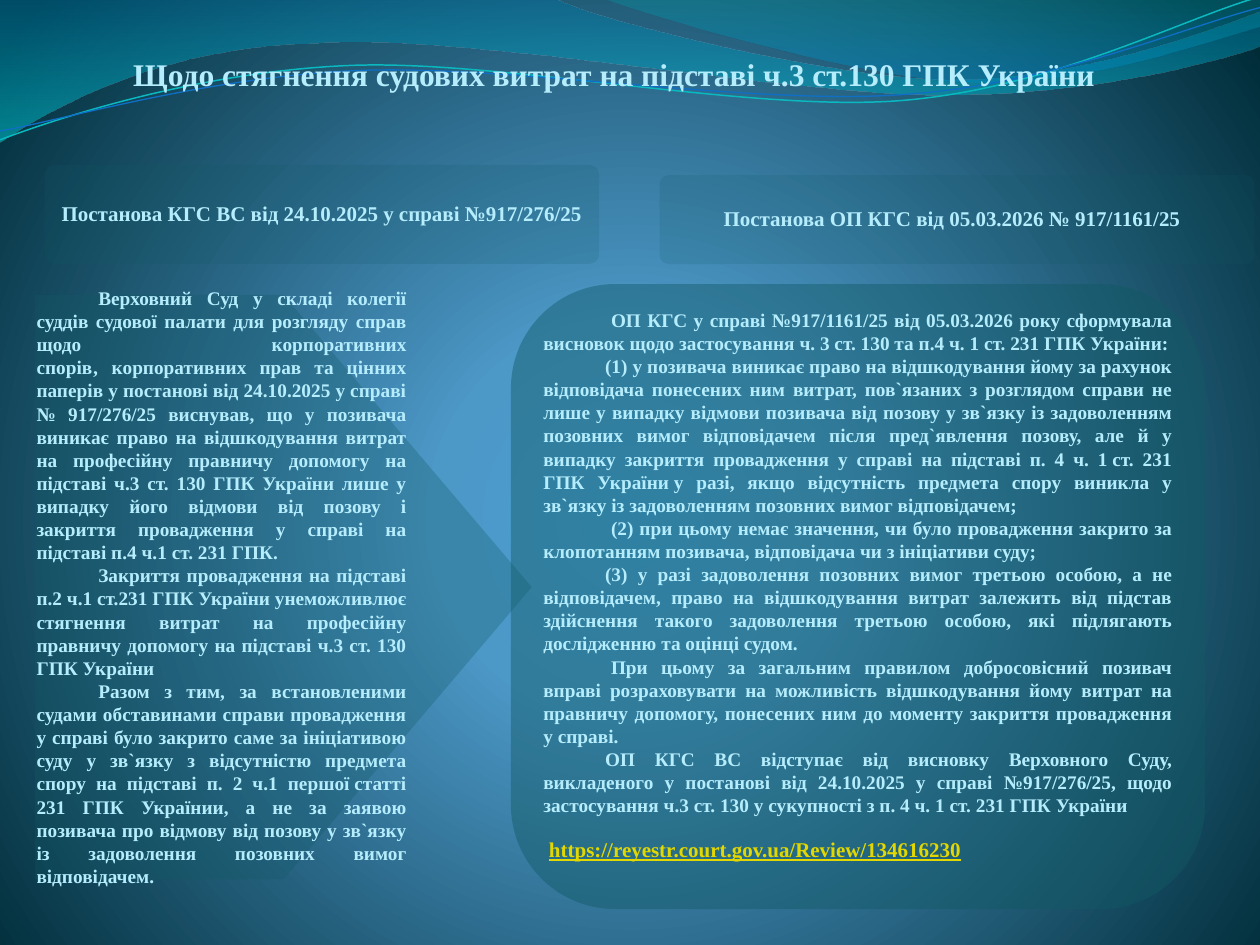
from math import cos, radians, sin

from lxml import etree
from pptx import Presentation
from pptx.dml.color import RGBColor
from pptx.enum.shapes import MSO_SHAPE
from pptx.enum.text import MSO_ANCHOR, PP_ALIGN
from pptx.oxml import parse_xml
from pptx.oxml.ns import nsdecls, qn
from pptx.util import Inches, Pt

CENTER, JUSTIFY = PP_ALIGN.CENTER, PP_ALIGN.JUSTIFY
TOP, MIDDLE = MSO_ANCHOR.TOP, MSO_ANCHOR.MIDDLE
PENTAGON = MSO_SHAPE.PENTAGON
SOFT_BOX = MSO_SHAPE.FLOWCHART_ALTERNATE_PROCESS
ROUNDED = MSO_SHAPE.ROUNDED_RECTANGLE

COLORS = {"text": "B5EDFD", "panel": "115964", "link": "E2D700",
          "glow": "4AA0D6", "sky": "4C98C7", "night": "002C38",
          "wave_blue": "0074A1", "wave_cyan": "00C6CF",
          "crest_teal": "00A1A9", "crest_blue": "008BBF",
          "line_cyan": "0AB8BF", "line_blue": "0F6FC6"}
FONT = "Times New Roman"
HARD_SPACE = chr(160)  # typed as ~ in the paragraphs below

prs = Presentation()
prs.slide_width, prs.slide_height = Inches(10), Inches(7.5)
slide = prs.slides.add_slide(prs.slide_layouts[6])
# Grid of 100 columns and 75 rows
COL, ROW = prs.slide_width / 100, prs.slide_height / 75


def gradient(stops, direction):
    """Gradient fill from (position %, colour, opacity %) stops."""
    marks = "".join(
        f'<a:gs pos="{pos * 1000}"><a:srgbClr val="{COLORS[color]}">'
        f'<a:alpha val="{opacity * 1000}"/></a:srgbClr></a:gs>'
        for pos, color, opacity in stops)
    return parse_xml(f'<a:gradFill {nsdecls("a")} rotWithShape="1">'
                     f'<a:gsLst>{marks}</a:gsLst>{direction}</a:gradFill>')


def write_text(area, anchor, inset, align, size, paragraphs, spacing=1.0):
    """Text box on the grid; paragraphs are (first-line indent, text)."""
    left, top, width, height = area
    box = slide.shapes.add_textbox(int(left * COL), int(top * ROW),
                                   int(width * COL), int(height * ROW))
    frame = box.text_frame
    frame.word_wrap = True
    frame.vertical_anchor = anchor
    frame.margin_left = frame.margin_right = int(inset * COL)
    frame.margin_top = frame.margin_bottom = int(inset * ROW)
    for number, (indent, text) in enumerate(paragraphs):
        para = frame.add_paragraph() if number else frame.paragraphs[0]
        para.text = text.replace("~", HARD_SPACE)
        para.alignment = align
        para.line_spacing = spacing
        para._p.get_or_add_pPr().set("marL", "0")
        para._p.get_or_add_pPr().set("indent", str(int(indent * COL)))
        para.font.name, para.font.size, para.font.bold = FONT, Pt(size), True
        para.font.color.rgb = RGBColor.from_string(COLORS["text"])
    return frame


# Background glow
slide.background.fill.gradient()
plain = slide.element.find(".//" + qn("p:bgPr")).find(qn("a:gradFill"))
plain.getparent().replace(plain, gradient(
    [(0, "glow", 100), (25, "sky", 100), (100, "night", 100)],
    '<a:path path="circle"><a:fillToRect l="10000" t="110000" r="10000" '
    'b="100000"/></a:path>'))

# Waves at the top: style, tilt, centre, then steps of one point (straight)
# or three points (curved)
waves = [
    ([(0, "wave_blue", 45), (100, "wave_cyan", 55)], 0, (50, 5.6),
     [[(0, 0)], [(44, -0.1)], [(47.6, 1.7), (66.4, 6.3), (75.8, 6.3)],
      [(85.3, 6.3), (95.8, 2.6), (100, 0.9)], [(100.1, 3.6)],
      [(98.3, 4.4), (87, 7.6), (74.6, 7.5)],
      [(62.2, 7.5), (38.2, 2.8), (25.7, 3.4)],
      [(12.9, 3.6), (4.6, 8.3), (-0.1, 11.3)]]),
    ([(0, "crest_teal", 30), (80, "crest_blue", 45)], 0, (74, 3.4),
     [[(47.9, -0.1)], [(50.9, 1.1), (68.2, 6.2), (76.9, 6.5)],
      [(85.6, 6.9), (96.1, 3.2), (100, 2.1)], [(100, 0)]]),
    (("line_cyan", 0.85), -2.7, (49.9, 5.75),
     [[(0, 11.1)], [(4.8, 9.3), (15.8, 5.7), (27.7, 5.2)],
      [(39.5, 4.7), (59.3, 8.9), (71.3, 8)],
      [(83.3, 7.1), (93.8, 1.5), (99.8, -0.2)]]),
    (("line_blue", 0.75), -2.7, (49.95, 5.9),
     [[(0, 10.4)], [(4.7, 9.6), (16.4, 6.1), (28.3, 5.6)],
      [(40.3, 5.1), (59.7, 8.4), (71.7, 7.5)],
      [(83.6, 6.7), (94.1, 2.1), (100, 0.6)]]),
]
for style, tilt, (mid_x, mid_y), steps in waves:
    # Level the points; the shape's rotation tilts them back
    turn_cos, turn_sin = cos(radians(-tilt)), sin(radians(-tilt))
    level = [[(round((mid_x + (x - mid_x) * turn_cos - (y - mid_y) * turn_sin) * COL),
               round((mid_y + (x - mid_x) * turn_sin + (y - mid_y) * turn_cos) * ROW))
              for x, y in step] for step in steps]
    is_filled = isinstance(style, list)
    builder = slide.shapes.build_freeform(*level[0][0])
    builder.add_line_segments([step[-1] for step in level[1:]], close=is_filled)
    wave = builder.convert_to_shape()
    # Turn the straight segments of three-point steps into curves
    for segment, step in zip(list(wave._element.iter(qn("a:lnTo"))), level[1:]):
        if len(step) == 3:
            points = "".join(f'<a:pt x="{x - wave.left}" y="{y - wave.top}"/>'
                             for x, y in step)
            segment.getparent().replace(segment, parse_xml(
                f'<a:cubicBezTo {nsdecls("a")}>{points}</a:cubicBezTo>'))
    wave.rotation = tilt
    wave.shadow.inherit = False
    if is_filled:
        wave.line.fill.background()
        wave.fill.gradient()
        plain = wave._element.spPr.find(qn("a:gradFill"))
        plain.getparent().replace(
            plain, gradient(style, '<a:lin ang="5400000" scaled="0"/>'))
    else:
        wave.fill.background()
        wave.line.color.rgb = RGBColor.from_string(COLORS[style[0]])
        wave.line.width = Pt(style[1])

# Title
write_text((6.65, 4.25, 84.2, 3.2), MIDDLE, 0, CENTER, 18,
           [(0, "Щодо стягнення судових витрат на підставі ч.3 ст.130 ГПК України")])

# Translucent panels: preset, area, opacity %
panels = [(PENTAGON, (2.8, 23.4, 39.4, 46.4), 29),
          (SOFT_BOX, (40.55, 22.55, 55.1, 49.6), 44),
          (ROUNDED, (3.55, 13.1, 44, 7.85), 17),
          (ROUNDED, (52.35, 13.9, 47.2, 7.05), 16)]
for preset, (left, top, width, height), opacity in panels:
    panel = slide.shapes.add_shape(preset, int(left * COL), int(top * ROW),
                                   int(width * COL), int(height * ROW))
    panel.shadow.inherit = False
    panel.line.fill.background()
    panel.fill.solid()
    panel.fill.fore_color.rgb = RGBColor.from_string(COLORS["panel"])
    tint = panel._element.spPr.find(qn("a:solidFill"))[0]
    etree.SubElement(tint, qn("a:alpha")).set("val", str(opacity * 1000))
    if preset == ROUNDED:
        panel.adjustments[0] = 0.1

# Earlier ruling
write_text((2.8, 23.37, 29.58, 46.4), MIDDLE, 0.1, JUSTIFY, 11, [
    (4.9, "Верховний Суд у складі колегії суддів судової палати для розгляду справ щодо корпоративних спорів‚ корпоративних прав та цінних паперів у постанові від 24.10.2025 у справі № 917/276/25 виснував, що у позивача виникає право на відшкодування витрат на професійну правничу допомогу на підставі ч.3 ст. 130 ГПК України лише у випадку його відмови від позову і закриття провадження у справі на підставі п.4 ч.1 ст. 231 ГПК."),
    (4.9, "Закриття провадження на підставі п.2 ч.1 ст.231 ГПК України унеможливлює стягнення витрат на професійну правничу допомогу на підставі ч.3 ст. 130 ГПК України"),
    (4.9, "Разом з тим, за встановленими судами обставинами справи провадження у справі було закрито саме за ініціативою суду у зв`язку з відсутністю предмета спору на підставі п. 2 ч.1 першої~статті 231 ГПК Українии, а не за заявою позивача про відмову від позову у зв`язку із задоволення позовних вимог відповідачем."),
])

# Later ruling, closing with the register address
ruling = write_text((42.92, 24.25, 50.35, 45.3), TOP, 0.2, JUSTIFY, 11, [
    (5.37, "ОП КГС у справі №917/1161/25 від 05.03.2026 року сформувала висновок щодо застосування ч. 3 ст.~130~та п.4 ч. 1 ст.~231 ГПК України:"),
    (4.9, "(1) у позивача виникає право на відшкодування йому за рахунок відповідача понесених ним витрат, пов`язаних з розглядом справи не лише у випадку відмови позивача від позову у зв`язку із задоволенням позовних вимог відповідачем після пред`явлення позову, але й у випадку закриття провадження у справі на підставі п. 4 ч. 1~ст. 231 ГПК України~у разі, якщо відсутність предмета спору виникла у зв`язку із задоволенням позовних вимог відповідачем;"),
    (5.37, "(2) при цьому немає значення, чи було провадження закрито за клопотанням позивача, відповідача чи з ініціативи суду;"),
    (4.9, "(3) у разі задоволення позовних вимог третьою особою, а не відповідачем, право на відшкодування витрат залежить від підстав здійснення такого задоволення третьою особою, які підлягають дослідженню та оцінці судом."),
    (5.37, "При цьому за загальним правилом добросовісний позивач вправі розраховувати на можливість відшкодування йому витрат на правничу допомогу, понесених ним до моменту закриття провадження у справі."),
    (4.9, "ОП КГС ВС відступає від висновку Верховного Суду, викладеного у постанові від 24.10.2025 у справі №917/276/25, щодо застосування ч.3 ст. 130 у сукупності з п. 4 ч. 1 ст. 231 ГПК України"),
    (0.45, "https://reyestr.court.gov.ua/Review/134616230"),
])
address = ruling.paragraphs[-1]
address.space_before, address.line_spacing = Pt(13), 0.9
address.font.size, address.font.underline = Pt(12), True
address.font.color.rgb = RGBColor.from_string(COLORS["link"])

# Headings of the two rulings
write_text((3.95, 13.5, 43.2, 7.1), MIDDLE, 0.5, CENTER, 12,
           [(0, "Постанова КГС ВС від 24.10.2025 у справі №917/276/25")], 0.9)
write_text((52.28, 14.2, 46.6, 6.4), MIDDLE, 0.5, CENTER, 12,
           [(0, "Постанова ОП КГС від 05.03.2026 № 917/1161/25")], 0.9)

prs.save("out.pptx")
